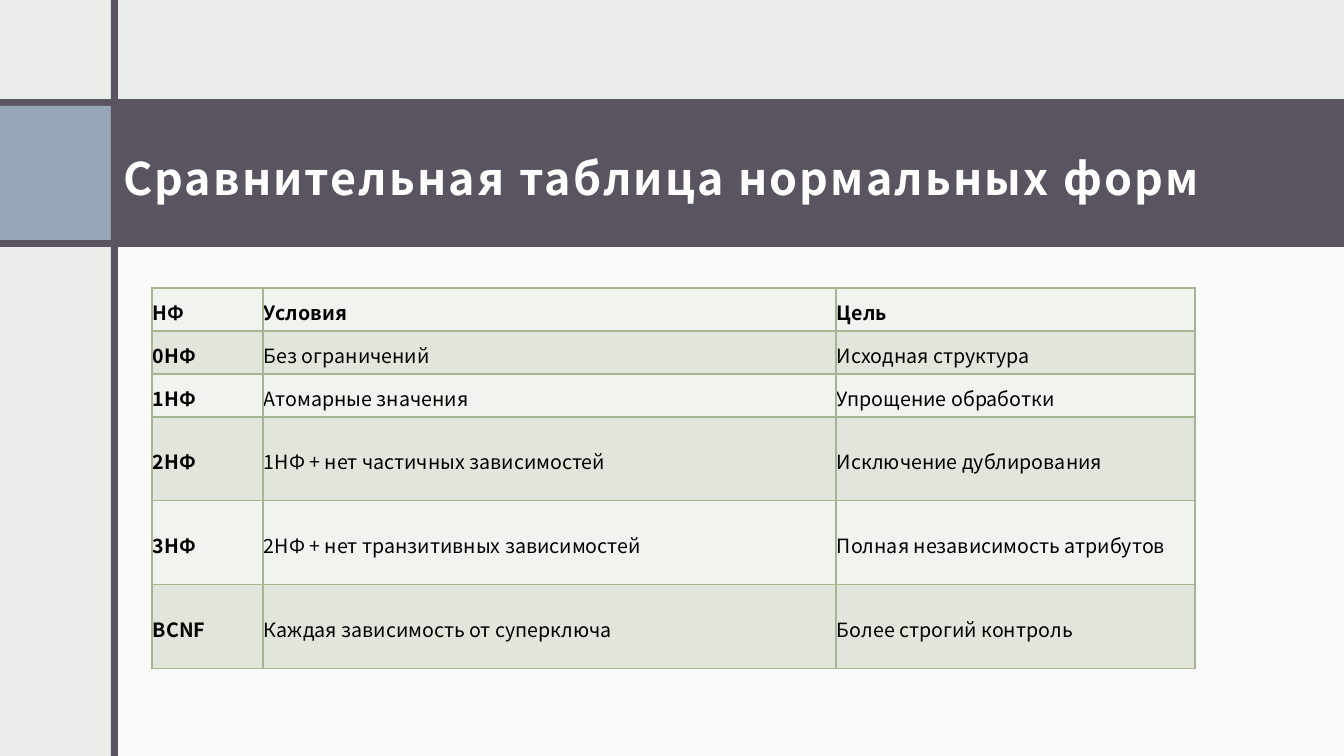
from lxml import etree
from pptx import Presentation
from pptx import util as u
from pptx.dml.color import RGBColor
from pptx.enum import shapes, text
from pptx.oxml.ns import qn

PX_PER_INCH = 100.8
FONT = "Noto Sans CJK JP"
PLUM, MIST, PANEL, STEEL = "595460", "EBEDEB", "FAFAFA", "97A7B8"
BANDS = ("F0F3EE", "E1E5DC")
GRID = "A5B592"

COLUMN_WIDTHS = (111, 573, 359)
ROW_HEIGHTS = (43, 43, 43, 84, 84, 84)
NORMAL_FORMS = (
    ("НФ", "Условия", "Цель"),
    ("0НФ", "Без ограничений", "Исходная структура"),
    ("1НФ", "Атомарные значения", "Упрощение обработки"),
    ("2НФ", "1НФ + нет частичных зависимостей", "Исключение дублирования"),
    ("3НФ", "2НФ + нет транзитивных зависимостей", "Полная независимость атрибутов"),
    ("BCNF", "Каждая зависимость от суперключа", "Более строгий контроль"),
)


def px(*lengths):
    return [u.Emu(round(length * 914400 / PX_PER_INCH)) for length in lengths]


def paint(fill, color):
    fill.solid()
    fill.fore_color.rgb = RGBColor.from_string(color)


def write(frame, words, size, color, bold=False, spacing=None, line=None, after=None):
    paragraph = frame.paragraphs[0]
    paragraph.alignment = text.PP_ALIGN.LEFT
    paragraph.line_spacing = line
    paragraph.space_after = after
    run = paragraph.add_run()
    run.text = words
    run.font.size = u.Pt(size)
    run.font.bold = bold
    run.font.name = FONT
    run.font.color.rgb = RGBColor.from_string(color)
    if spacing:
        run.font._element.set("spc", str(round(spacing * 100)))
    for script in ("a:ea", "a:cs"):
        etree.SubElement(run.font._element, qn(script), typeface=FONT)


def add_block(slide, left, top, width, height, color):
    block = slide.shapes.add_shape(
        shapes.MSO_SHAPE.RECTANGLE, *px(left, top, width, height))
    block.shadow.inherit = False
    paint(block.fill, color)
    block.line.fill.background()


def add_title(slide, words):
    frame = slide.shapes.add_textbox(*px(100, 106, 1229, 134)).text_frame
    frame.word_wrap = True
    frame.vertical_anchor = text.MSO_ANCHOR.MIDDLE
    (frame.margin_left, frame.margin_top,
     frame.margin_right, frame.margin_bottom) = px(23, 20, 12, 10)
    write(frame, words, 32, "FFFFFF", bold=True, spacing=1.5)


def outline(cell):
    properties = cell._tc.get_or_add_tcPr()
    for position, side in enumerate(("a:lnL", "a:lnR", "a:lnT", "a:lnB")):
        border = etree.Element(qn(side), w=str(u.Pt(1)))
        solid = etree.SubElement(border, qn("a:solidFill"))
        etree.SubElement(solid, qn("a:srgbClr"), val=GRID)
        properties.insert(position, border)


def add_comparison(slide, left, top):
    table = slide.shapes.add_table(
        len(ROW_HEIGHTS), len(COLUMN_WIDTHS),
        *px(left, top, sum(COLUMN_WIDTHS), sum(ROW_HEIGHTS))).table
    table.first_row = table.horz_banding = False
    for column, width in zip(table.columns, px(*COLUMN_WIDTHS)):
        column.width = width
    for row, height in zip(table.rows, px(*ROW_HEIGHTS)):
        row.height = height
    for r, form in enumerate(NORMAL_FORMS):
        for c, words in enumerate(form):
            cell = table.cell(r, c)
            paint(cell.fill, BANDS[r % 2])
            cell.vertical_anchor = text.MSO_ANCHOR.MIDDLE
            (cell.margin_left, cell.margin_top,
             cell.margin_right, cell.margin_bottom) = px(1, 1, 1, 1)
            write(cell.text_frame, words, 14, "000000",
                  bold=r == 0 or c == 0, line=1.15, after=u.Pt(8))
            outline(cell)


def main():
    deck = Presentation()
    deck.slide_width, deck.slide_height = px(1344, 756)
    slide = deck.slides.add_slide(deck.slide_layouts[6])
    paint(slide.background.fill, MIST)
    add_block(slide, 115, 235, 1229, 521, PANEL)
    add_block(slide, 0, 99, 1344, 148, PLUM)
    add_block(slide, 0, 106, 111, 134, STEEL)
    add_block(slide, 111, 0, 7, 756, PLUM)
    add_title(slide, "Сравнительная таблица нормальных форм")
    add_comparison(slide, 152, 288)
    deck.save("out.pptx")


if __name__ == "__main__":
    main()
